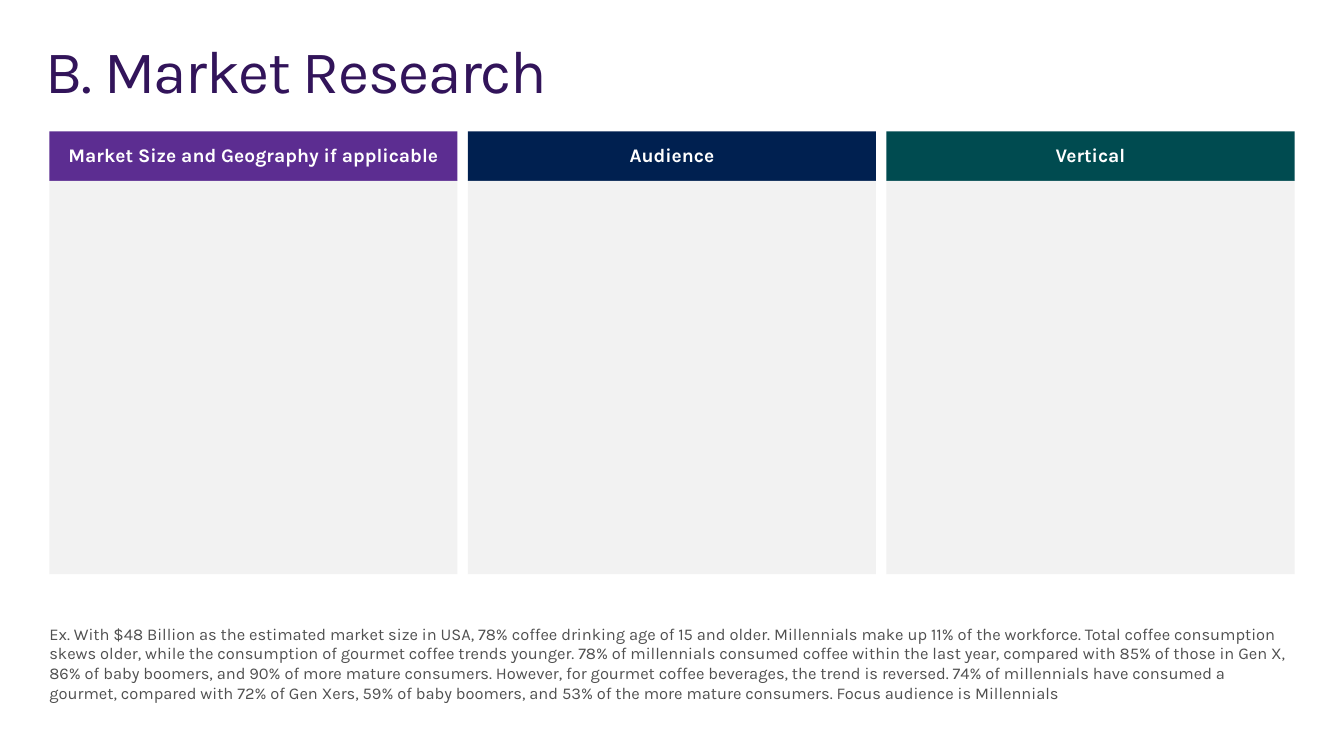
from pptx import Presentation
from pptx.dml.color import RGBColor
from pptx.enum.shapes import MSO_SHAPE as Shape
from pptx.enum.text import MSO_ANCHOR as Anchor, MSO_AUTO_SIZE as AutoSize, PP_ALIGN as Align
from pptx.util import Inches, Pt

FONT = "Karla"
TITLE_PURPLE = RGBColor(0x32, 0x14, 0x5A)
PURPLE = RGBColor(0x5C, 0x2D, 0x91)
NAVY = RGBColor(0x00, 0x20, 0x50)
TEAL = RGBColor(0x00, 0x4B, 0x50)
PANEL_GRAY = RGBColor(0xF2, 0xF2, 0xF2)
TEXT_GRAY = RGBColor(0x50, 0x50, 0x50)
WHITE = RGBColor(0xFF, 0xFF, 0xFF)

LEFT, CONTENT_WIDTH = 0.5, 12.6
COLUMN_WIDTH = 4.13
HEADER_TOP, HEADER_HEIGHT, PANEL_HEIGHT = 1.33, 0.5, 3.98

TOPICS = [
    ("Market Size and Geography if applicable", PURPLE),
    ("Audience", NAVY),
    ("Vertical", TEAL),
]
EXAMPLE = (
    "Ex. With $48 Billion as the estimated market size in USA, 78% coffee drinking age "
    "of 15 and older. Millennials make up 11% of the workforce. Total coffee consumption "
    "skews older, while the consumption of gourmet coffee trends younger. 78% of "
    "millennials consumed coffee within the last year, compared with 85% of those in "
    "Gen X, 86% of baby boomers, and 90% of more mature consumers. However, for gourmet "
    "coffee beverages, the trend is reversed. 74% of millennials have consumed a gourmet, "
    "compared with 72% of Gen Xers, 59% of baby boomers, and 53% of the more mature "
    "consumers. Focus audience is Millennials"
)


class ResearchSlide:
    """Holds the slide and its text style, and draws each kind of element."""

    def __init__(self, slide):
        self.slide = slide

    def set_text(self, frame, text, size, color, bold=False, align=Align.LEFT,
                 anchor=Anchor.TOP, line_spacing=1.0):
        frame.text = text
        frame.word_wrap = True
        frame.auto_size = AutoSize.NONE
        frame.vertical_anchor = anchor
        paragraph = frame.paragraphs[0]
        paragraph.alignment = align
        paragraph.line_spacing = line_spacing
        font = paragraph.runs[0].font
        font.name, font.size, font.bold = FONT, Pt(size), bold
        font.color.rgb = color
        return paragraph.runs[0]

    def title(self, text, left, top, width, height):
        heading = self.slide.shapes.title
        heading.left, heading.top = Inches(left), Inches(top)
        heading.width, heading.height = Inches(width), Inches(height)
        frame = heading.text_frame
        frame.margin_left = frame.margin_right = Inches(0.16)
        frame.margin_top = frame.margin_bottom = Inches(0.1)
        run = self.set_text(frame, text, 44, TITLE_PURPLE, line_spacing=0.9)
        run._r.get_or_add_rPr().set("spc", "-100")

    def block(self, left, top, width, height, fill):
        block = self.slide.shapes.add_shape(
            Shape.RECTANGLE, Inches(left), Inches(top), Inches(width), Inches(height))
        block.shadow.inherit = False
        block.fill.solid()
        block.fill.fore_color.rgb = fill
        block.line.fill.background()
        return block

    def column(self, left, topic, color):
        header = self.block(left, HEADER_TOP, COLUMN_WIDTH, HEADER_HEIGHT, color)
        self.set_text(header.text_frame, topic, 14, WHITE, True, Align.CENTER,
                      Anchor.MIDDLE, 0.9)
        self.block(left, HEADER_TOP + HEADER_HEIGHT, COLUMN_WIDTH, PANEL_HEIGHT, PANEL_GRAY)

    def note(self, text, left, top, width, height):
        note = self.slide.shapes.add_textbox(
            Inches(left), Inches(top), Inches(width), Inches(height))
        frame = note.text_frame
        frame.margin_left = frame.margin_right = 0
        frame.margin_top = frame.margin_bottom = 0
        self.set_text(frame, text, 12, TEXT_GRAY)


def main():
    deck = Presentation()
    deck.slide_width, deck.slide_height = Inches(13.6), Inches(7.65)
    research = ResearchSlide(deck.slides.add_slide(deck.slide_layouts[5]))
    research.title("B. Market Research", 0.3, 0.32, 13, 1)
    research.note(EXAMPLE, LEFT, 6.31, CONTENT_WIDTH, 0.81)
    pitch = (CONTENT_WIDTH - COLUMN_WIDTH) / (len(TOPICS) - 1)
    for index, (topic, color) in enumerate(TOPICS):
        research.column(LEFT + index * pitch, topic, color)
    deck.save("out.pptx")


if __name__ == "__main__":
    main()
